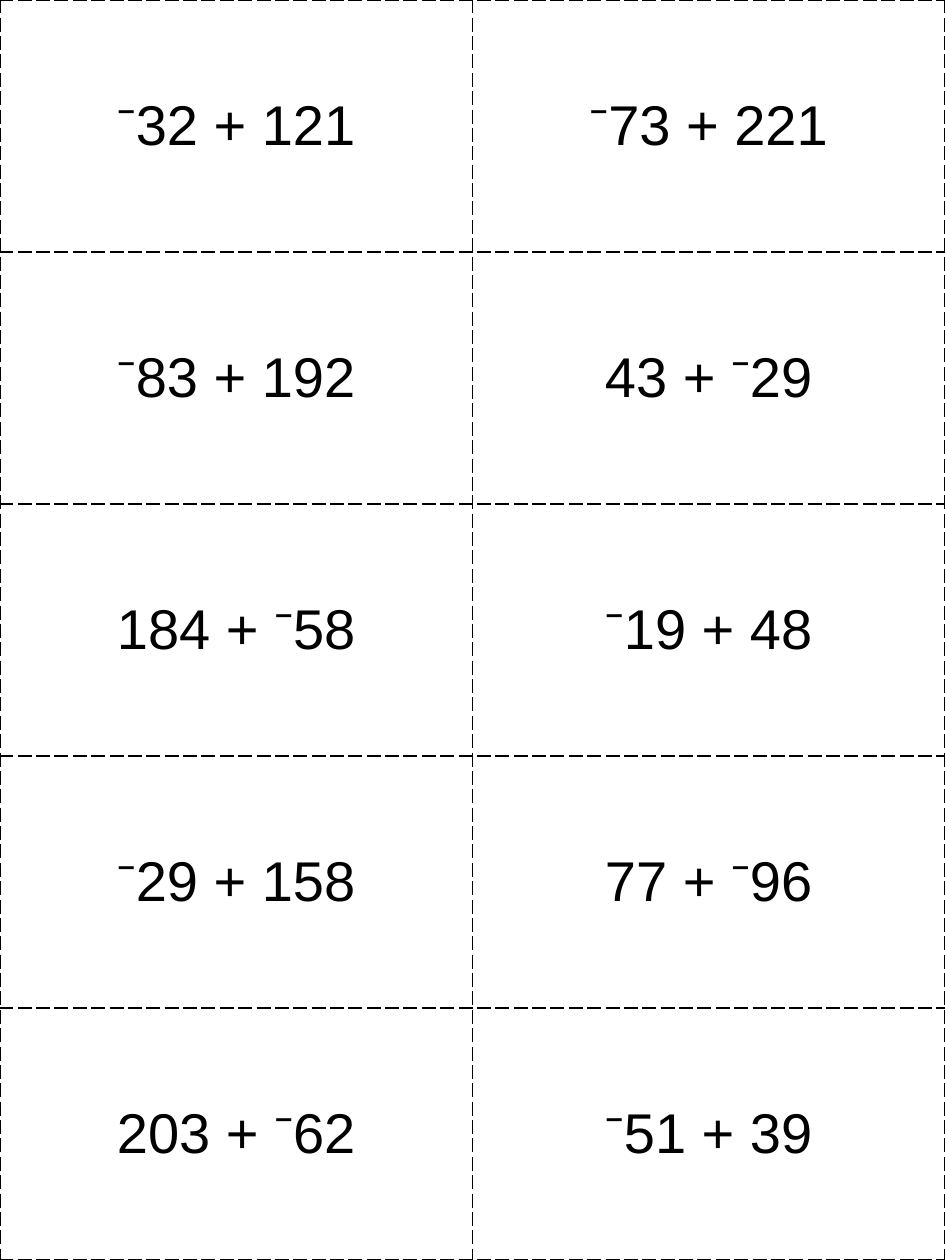
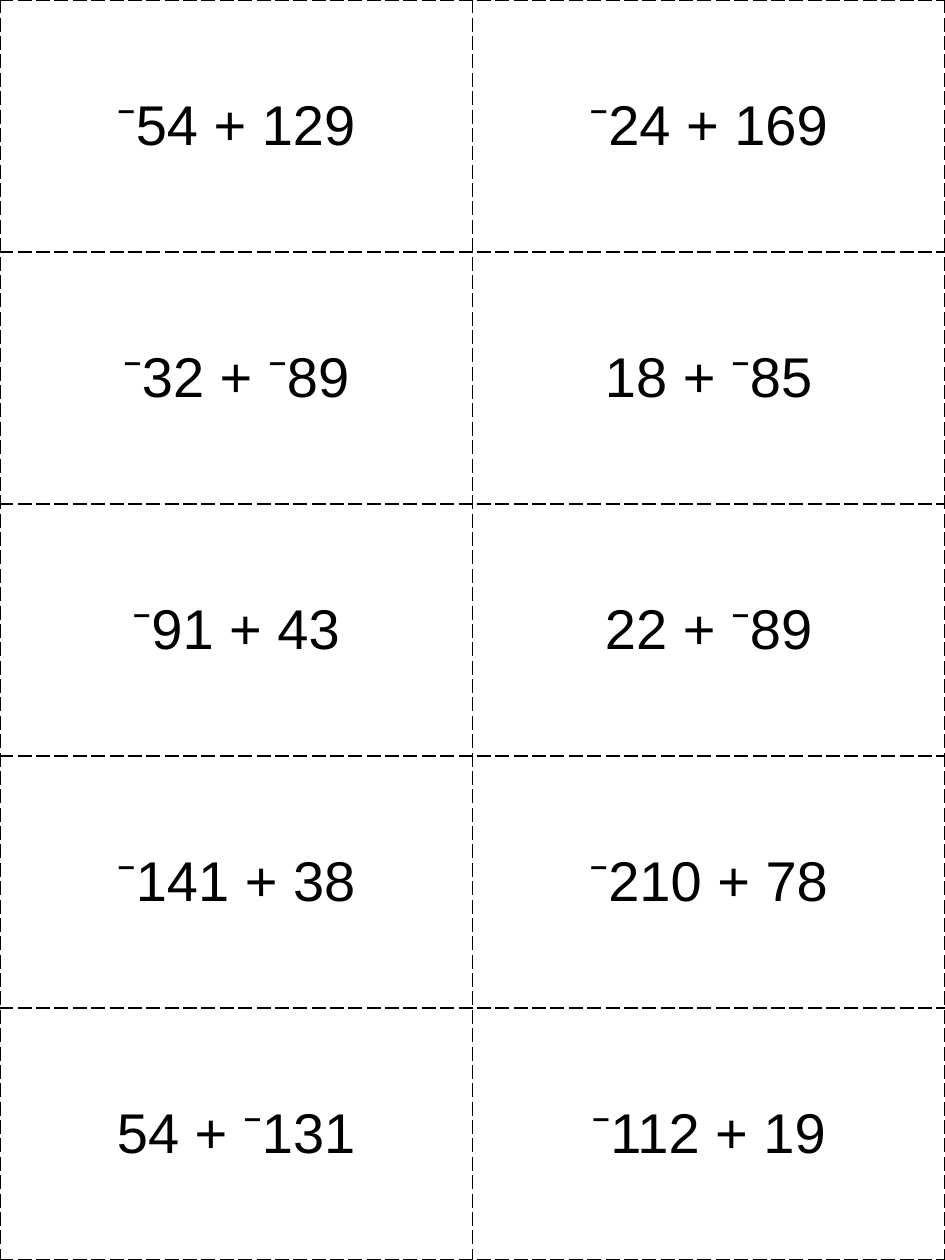
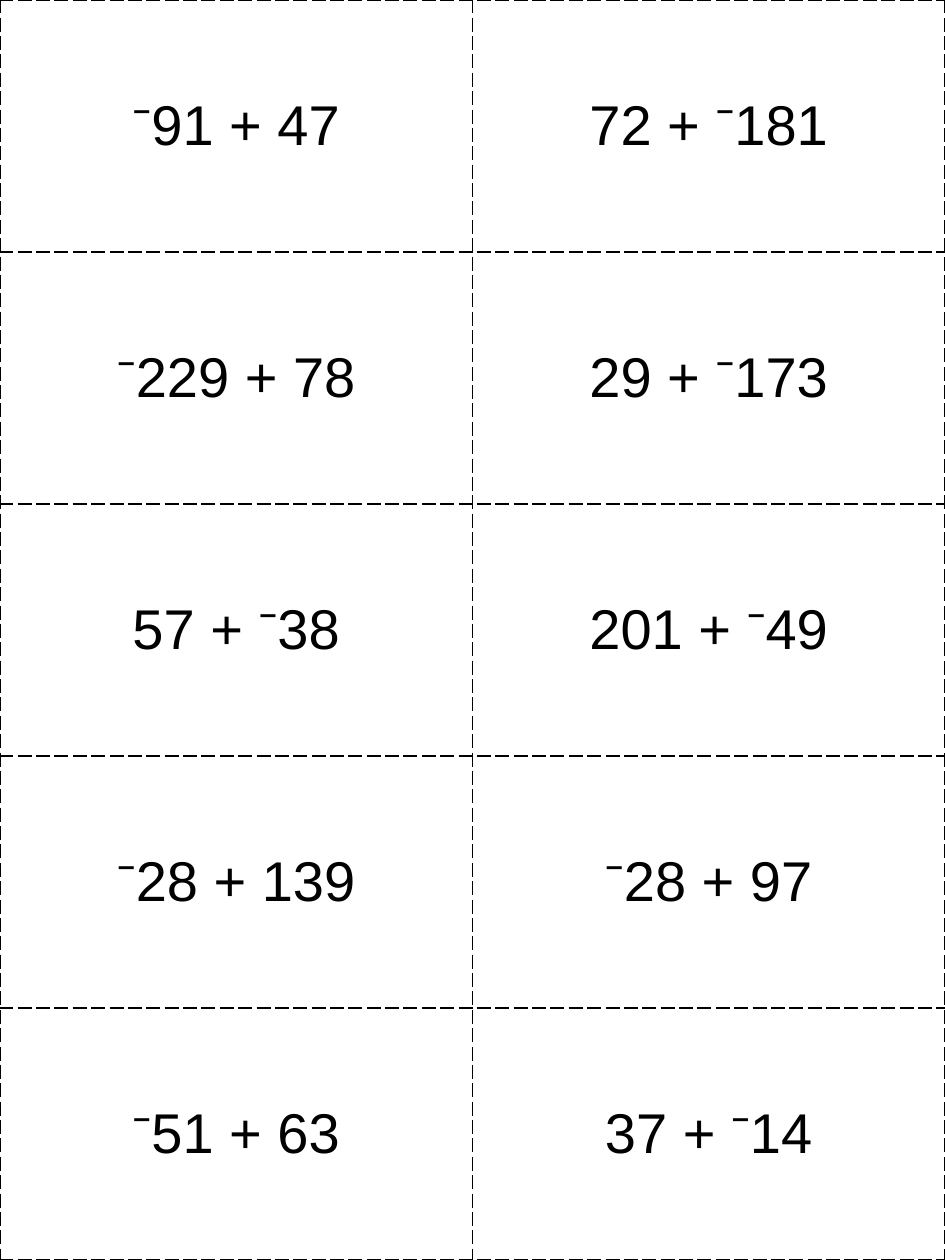
from lxml.etree import SubElement
from pptx import Presentation
from pptx.dml.color import RGBColor
from pptx.enum.text import MSO_ANCHOR, PP_ALIGN
from pptx.oxml.ns import qn
from pptx.util import Pt

PAGE_W, PAGE_H = Pt(540), Pt(720)
BLACK = RGBColor(0x00, 0x00, 0x00)
FONT = "Arial"
SUM_SIZE = Pt(32)
CUT_WIDTH = Pt(1)

CARD_SHEETS = [
    [
        ("⁻32 + 121", "⁻73 + 221"),
        ("⁻83 + 192", "43 + ⁻29"),
        ("184 + ⁻58", "⁻19 + 48"),
        ("⁻29 + 158", "77 + ⁻96"),
        ("203 + ⁻62", "⁻51 + 39"),
    ],
    [
        ("⁻54 + 129", "⁻24 + 169"),
        ("⁻32 + ⁻89", "18 + ⁻85"),
        ("⁻91 + 43", "22 + ⁻89"),
        ("⁻141 + 38", "⁻210 + 78"),
        ("54 + ⁻131", "⁻112 + 19"),
    ],
    [
        ("⁻91 + 47", "72 + ⁻181"),
        ("⁻229 + 78", "29 + ⁻173"),
        ("57 + ⁻38", "201 + ⁻49"),
        ("⁻28 + 139", "⁻28 + 97"),
        ("⁻51 + 63", "37 + ⁻14"),
    ],
]


def add_cut_lines(cell):
    """Draw a dashed border on all four sides of a card."""
    tc_pr = cell._tc.get_or_add_tcPr()
    for side in ("a:lnL", "a:lnR", "a:lnT", "a:lnB"):
        ln = SubElement(tc_pr, qn(side), w=str(CUT_WIDTH))
        fill = SubElement(ln, qn("a:solidFill"))
        SubElement(fill, qn("a:srgbClr"), val=str(BLACK))
        SubElement(ln, qn("a:prstDash"), val="lgDash")


def fill_card(cell, text):
    add_cut_lines(cell)
    cell.fill.background()
    cell.vertical_anchor = MSO_ANCHOR.MIDDLE
    p = cell.text_frame.paragraphs[0]
    p.alignment = PP_ALIGN.CENTER
    r = p.add_run()
    r.text = text
    r.font.name = FONT
    r.font.size = SUM_SIZE
    r.font.color.rgb = BLACK


def add_card_sheet(prs, sums):
    """Add a slide whose page is divided evenly into cards."""
    s = prs.slides.add_slide(prs.slide_layouts[6])
    table = s.shapes.add_table(len(sums), len(sums[0]), Pt(0), Pt(0), PAGE_W, PAGE_H).table
    table.first_row = False
    table.horz_banding = False
    for row, row_sums in zip(table.rows, sums):
        for cell, text in zip(row.cells, row_sums):
            fill_card(cell, text)


def main():
    prs = Presentation()
    prs.slide_width, prs.slide_height = PAGE_W, PAGE_H
    for sums in CARD_SHEETS:
        add_card_sheet(prs, sums)
    prs.save("out.pptx")


if __name__ == "__main__":
    main()
